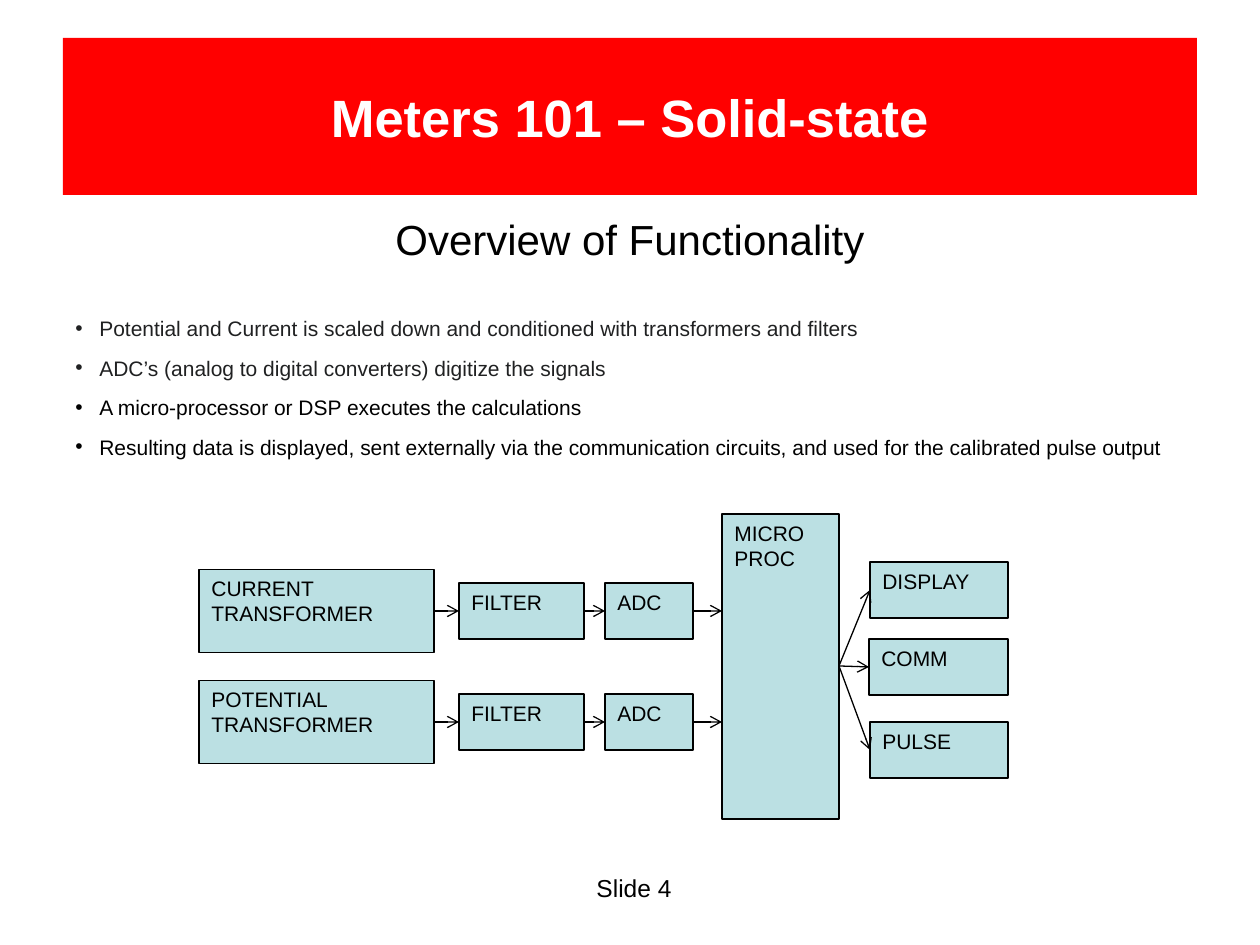
import pptx
import pptx.dml.color
import pptx.enum.shapes
import pptx.enum.text
import pptx.oxml.ns
import pptx.util
from lxml import etree

PX = 914400 / 126
COLORS = {"red": "FF0000", "white": "FFFFFF", "black": "000000",
          "dark": "202122", "box": "BBE0E3"}
RGB = {name: pptx.dml.color.RGBColor.from_string(c) for name, c in COLORS.items()}
ALIGN = pptx.enum.text.PP_ALIGN
RECT = pptx.enum.shapes.MSO_SHAPE.RECTANGLE
STRAIGHT = pptx.enum.shapes.MSO_CONNECTOR.STRAIGHT
qn = pptx.oxml.ns.qn

prs = pptx.Presentation()
prs.slide_width, prs.slide_height = round(1260 * PX), round(945 * PX)
s = prs.slides.add_slide(prs.slide_layouts[6])


def add_block(place, lines, size, color="black", fill=None, align=ALIGN.LEFT):
    """Add a text box, or a rectangle when a fill is given; place is in px."""
    place = [round(v * PX) for v in place]
    if fill:
        sp = s.shapes.add_shape(RECT, *place)
        sp.shadow.inherit = False
        sp.fill.solid()
        sp.fill.fore_color.rgb = RGB[fill]
    else:
        sp = s.shapes.add_textbox(*place)
    tf = sp.text_frame
    tf.word_wrap = True
    tf.vertical_anchor = pptx.enum.text.MSO_ANCHOR.TOP
    for i, line in enumerate(lines):
        p = tf.add_paragraph() if i else tf.paragraphs[0]
        p.alignment = align
        r = p.add_run()
        r.text = line
        r.font.name = "Arial"
        r.font.size = pptx.util.Pt(size)
        r.font.color.rgb = RGB[color]
    return sp


def add_arrow(*ends):
    c = s.shapes.add_connector(STRAIGHT, *[round(v * PX) for v in ends])
    c.line.color.rgb = RGB["black"]
    c.line.width = pptx.util.Pt(0.75)
    etree.SubElement(c.line._get_or_add_ln(), qn("a:tailEnd"), type="arrow")
    etree.SubElement(c._element.spPr, qn("a:effectLst"))


# Title, subtitle and footer
title = add_block((63, 38, 1134, 157), ["Meters 101 – Solid-state"], 30,
                  "white", "red", ALIGN.CENTER)
title.line.fill.background()
title.text_frame.vertical_anchor = pptx.enum.text.MSO_ANCHOR.MIDDLE
title.text_frame.paragraphs[0].runs[0].font.bold = True
add_block((310, 207, 640, 64), ["Overview of Functionality"], 24, align=ALIGN.CENTER)
add_block((63, 867, 1142, 43), ["Slide 4"], 14, align=ALIGN.CENTER)

# Bullets
bullets = add_block((63, 294, 1134, 189), [
    "Potential and Current is scaled down and conditioned with transformers and filters",
    "ADC’s (analog to digital converters) digitize the signals",
    "A micro-processor or DSP executes the calculations",
    "Resulting data is displayed, sent externally via the communication circuits, "
    "and used for the calibrated pulse output",
], 12)
bullets.text_frame.margin_top = round(9 * PX)
for i, p in enumerate(bullets.text_frame.paragraphs):
    p.line_spacing = 1.5
    p.space_after = pptx.util.Pt(1)
    pPr = p._p.get_or_add_pPr()
    pPr.set("marL", str(round(24 * PX)))
    pPr.set("indent", str(round(-24 * PX)))
    etree.SubElement(pPr, qn("a:buFont"), typeface="Arial")
    etree.SubElement(pPr, qn("a:buChar"), char="•")
    if i < 2:
        p.runs[0].font.color.rgb = RGB["dark"]

# Block diagram: two input rows, the processor and three outputs
MICRO_X, MICRO_Y, MICRO_W, MICRO_H = 722, 514, 117, 305
MICRO_MID = MICRO_Y + MICRO_H // 2
blocks = [((MICRO_X, MICRO_Y, MICRO_W, MICRO_H), ["MICRO", "PROC"])]
arrows = []

for mid, source in ((611, "CURRENT TRANSFORMER"), (722, "POTENTIAL TRANSFORMER")):
    stages = [(199, 235, 83, source), (459, 125, 56, "FILTER"), (605, 88, 56, "ADC")]
    next_xs = [stage[0] for stage in stages[1:]] + [MICRO_X]
    for (x, w, h, label), next_x in zip(stages, next_xs):
        blocks.append(((x, mid - h / 2, w, h), [label]))
        arrows.append((x + w, mid, next_x, mid))

for x, y, label in ((870, 562, "DISPLAY"), (869, 639, "COMM"), (870, 722, "PULSE")):
    blocks.append(((x, y, 1008 - x, 56), [label]))
    arrows.append((MICRO_X + MICRO_W, MICRO_MID, x, y + 28))

for place, lines in blocks:
    sp = add_block(place, lines, 12, fill="box")
    sp.line.color.rgb = RGB["black"]
    sp.line.width = pptx.util.Pt(0.75)
for ends in arrows:
    add_arrow(*ends)

prs.save("out.pptx")
